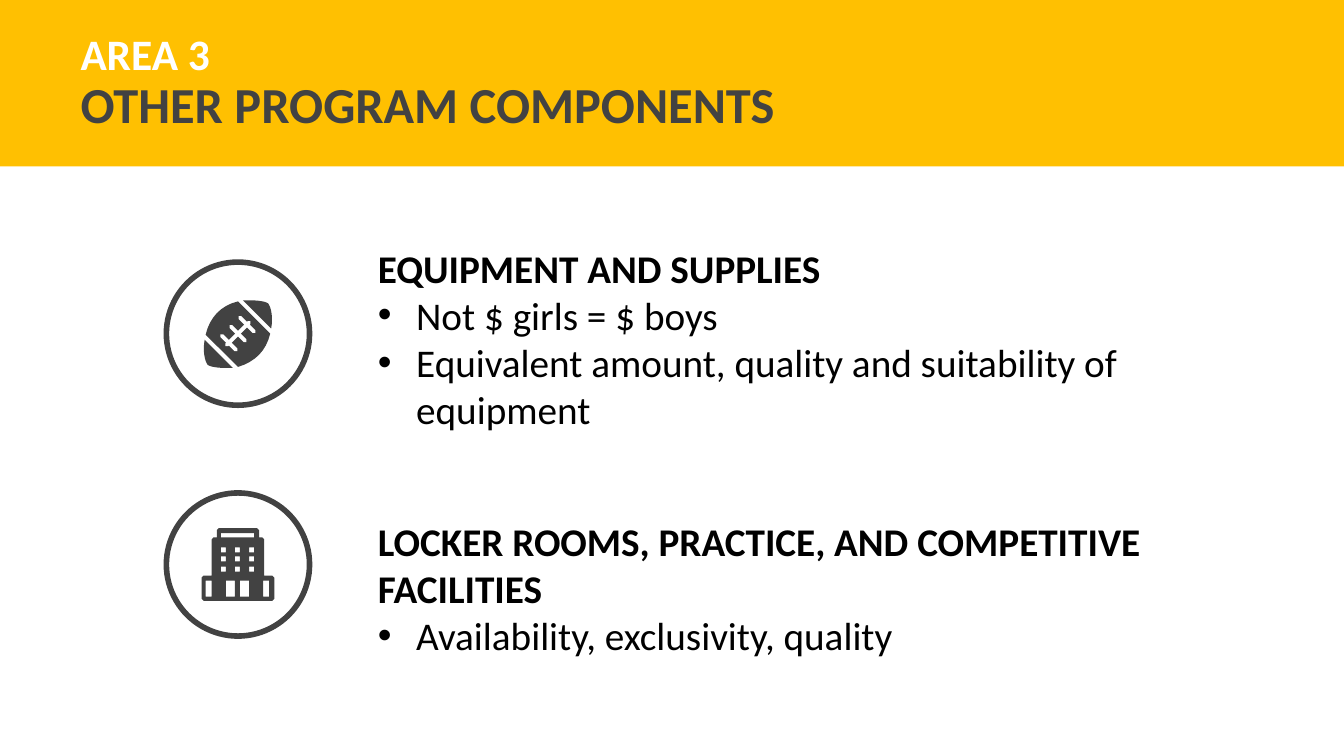
from lxml import etree
from pptx import Presentation
from pptx.dml.color import RGBColor
from pptx.enum.shapes import MSO_CONNECTOR, MSO_SHAPE
from pptx.enum.text import MSO_ANCHOR
from pptx.oxml.ns import qn
from pptx.util import Inches, Pt

RECT, ELLIPSE = MSO_SHAPE.RECTANGLE, MSO_SHAPE.OVAL
STRAIGHT = MSO_CONNECTOR.STRAIGHT
TOP, MIDDLE = MSO_ANCHOR.TOP, MSO_ANCHOR.MIDDLE

YELLOW = RGBColor(0xFF, 0xC0, 0x01)
GRAY = RGBColor(0x42, 0x42, 0x42)
WHITE = RGBColor(0xFF, 0xFF, 0xFF)
BLACK = RGBColor(0, 0, 0)

FONT = "Calibri"
INDENT = 0.38
CIRCLE = 1.42


def add_run(p, text, size=28, color=BLACK, bold=False):
    r = p.add_run()
    r.text = text
    r.font.name = FONT
    r.font.size = Pt(size)
    r.font.bold = bold
    r.font.color.rgb = color


def add_box(s, x, y, w, h, anchor=TOP):
    tf = s.shapes.add_textbox(Inches(x), Inches(y), Inches(w), Inches(h)).text_frame
    tf.word_wrap = True
    tf.vertical_anchor = anchor
    return tf


def add_bullet(p):
    pPr = p._p.get_or_add_pPr()
    pPr.set("marL", str(Inches(INDENT)))
    pPr.set("indent", str(-Inches(INDENT)))
    etree.SubElement(pPr, qn("a:buFont")).set("typeface", "Arial")
    etree.SubElement(pPr, qn("a:buChar")).set("char", "•")


def curve(p0, p1, p2, p3, steps=8):
    """Points along a cubic curve, both ends included."""
    points = []
    for i in range(steps + 1):
        t = i / steps
        u = 1 - t
        points.append(tuple(u**3 * a + 3 * u * u * t * b + 3 * u * t * t * c + t**3 * d
                            for a, b, c, d in zip(p0, p1, p2, p3)))
    return points


def rect_points(left, top, right, bottom):
    return [(left, top), (right, top), (right, bottom), (left, bottom)]


def add_outline(shapes, x, y, contours):
    """Fill closed contours given relative to (x, y); inner ones are holes."""
    placed = [[(Inches(x + px), Inches(y + py)) for px, py in c] for c in contours]
    fb = shapes.build_freeform(*placed[0][0])
    for i, points in enumerate(placed):
        if i:
            fb.move_to(*points[0])
        fb.add_line_segments(points[1:], close=True)
    sp = fb.convert_to_shape()
    sp.shadow.inherit = False
    sp.fill.solid()
    sp.fill.fore_color.rgb = GRAY
    sp.line.fill.background()


def add_stitch(shapes, x, y, x1, y1, x2, y2):
    line = shapes.add_connector(STRAIGHT, Inches(x + x1), Inches(y + y1),
                                Inches(x + x2), Inches(y + y2))
    line.line.color.rgb = WHITE
    line.line.width = Pt(2.75)
    line.line._get_or_add_ln().set("cap", "rnd")
    etree.SubElement(line._element.spPr, qn("a:effectLst"))


def draw_football(shapes, x, y):
    # Two tips, the second turned half way round the centre
    tip = [(0.76, 0.38)]
    tip += curve((1.04, 0.66), (1.06, 0.55), (1.04, 0.45), (1.01, 0.41))
    tip += curve((1.01, 0.41), (0.98, 0.39), (0.91, 0.38), (0.84, 0.38))
    add_outline(shapes, x, y, [tip])
    add_outline(shapes, x, y, [[(CIRCLE - px, CIRCLE - py + 0.01) for px, py in tip]])
    # Middle of the ball
    body = curve((0.71, 0.39), (0.54, 0.43), (0.43, 0.55), (0.39, 0.72))
    body += curve((0.71, 1.04), (0.88, 0.99), (0.99, 0.88), (1.03, 0.71))
    add_outline(shapes, x, y, [body])
    # Seam and laces
    add_stitch(shapes, x, y, 0.6, 0.82, 0.82, 0.6)
    for i in range(3):
        step = 0.09 * i
        add_stitch(shapes, x, y, 0.55 + step, 0.73 - step, 0.69 + step, 0.87 - step)


def draw_building(shapes, x, y):
    left = [(0.52, 0.35), (0.5, 0.37), (0.5, 0.44), (0.47, 0.44), (0.45, 0.46),
            (0.45, 0.82), (0.37, 0.82), (0.35, 0.84), (0.35, 1.05), (0.37, 1.07)]
    walls = left + [(CIRCLE - px, py) for px, py in reversed(left)]
    roof = rect_points(0.54, 0.4, 0.87, 0.44)
    windows = [rect_points(wx, wy, wx + 0.05, wy + 0.05)
               for wy in (0.54, 0.63, 0.73) for wx in (0.54, 0.68, 0.82)]
    doors = [rect_points(a, 0.87, b, 1.03)
             for a, b in ((0.39, 0.45), (0.59, 0.68), (0.73, 0.82), (0.96, 1.02))]
    add_outline(shapes, x, y, [walls, roof, *windows, *doors])


def add_icon(s, x, y, draw):
    shapes = s.shapes.add_group_shape().shapes
    draw(shapes, x, y)
    ring = shapes.add_shape(ELLIPSE, Inches(x), Inches(y), Inches(CIRCLE), Inches(CIRCLE))
    ring.shadow.inherit = False
    ring.fill.background()
    ring.line.color.rgb = GRAY
    ring.line.width = Pt(4)


def add_header(s, x, y, w, h, label, title):
    band = s.shapes.add_shape(RECT, Inches(x), Inches(y), Inches(w), Inches(h))
    band.shadow.inherit = False
    band.fill.solid()
    band.fill.fore_color.rgb = YELLOW
    band.line.fill.background()
    p = add_box(s, x + 0.7, y + 0.21, w - 1.71, 1.25, MIDDLE).paragraphs[0]
    p.line_spacing = 0.9
    add_run(p, label, size=31, color=WHITE, bold=True)
    p.add_line_break()
    add_run(p, title, size=36, color=GRAY, bold=True)


def add_topic(s, x, y, w, h, heading, points):
    tf = add_box(s, x, y, w, h)
    add_run(tf.paragraphs[0], heading, bold=True)
    for point in points:
        p = tf.add_paragraph()
        add_bullet(p)
        add_run(p, point)


def main():
    prs = Presentation()
    prs.slide_width, prs.slide_height = Inches(13.33), Inches(7.5)
    s = prs.slides.add_slide(prs.slide_layouts[6])

    add_header(s, 0, 0, 13.33, 1.65, "AREA 3", "OTHER PROGRAM COMPONENTS")
    add_topic(s, 3.65, 2.37, 8.67, 1.99, "EQUIPMENT AND SUPPLIES",
              ["Not $ girls = $ boys",
               "Equivalent amount, quality and suitability of equipment"])
    add_topic(s, 3.65, 5.08, 8.67, 1.51,
              "LOCKER ROOMS, PRACTICE, AND COMPETITIVE FACILITIES",
              ["Availability, exclusivity, quality"])
    add_icon(s, 1.65, 2.6, draw_football)
    add_icon(s, 1.65, 4.89, draw_building)

    prs.save("out.pptx")


if __name__ == "__main__":
    main()
